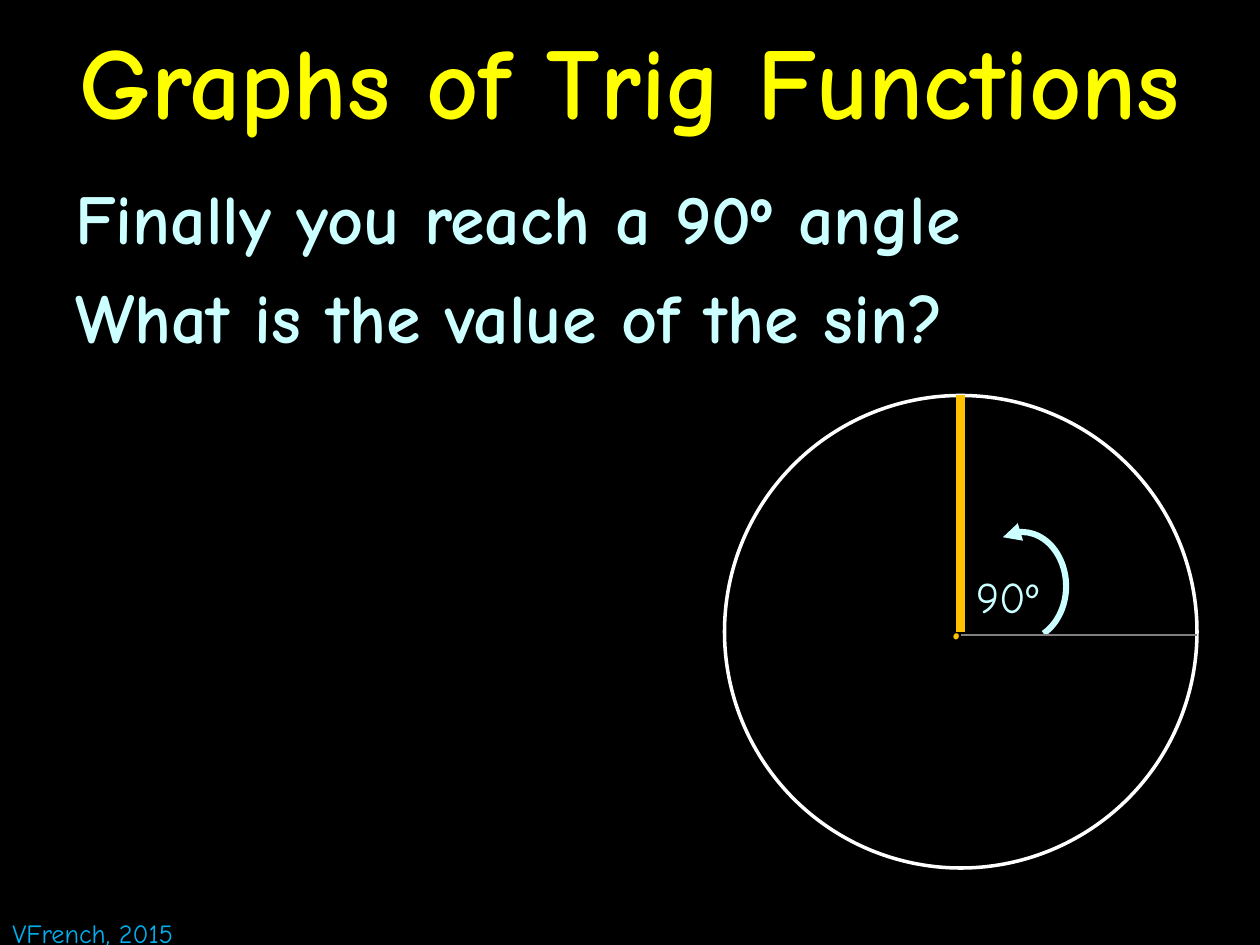
from pptx import Presentation
from pptx.dml.color import RGBColor
from pptx.enum import shapes, text
from pptx.oxml.ns import qn
from pptx.util import Pt
from lxml import etree


def rgb(value):
    return RGBColor.from_string(value)


def add_text(lines, x, y, w, h, size, color, bold=False, wrap=True, before=0):
    tf = s.shapes.add_textbox(Pt(x), Pt(y), Pt(w), Pt(h)).text_frame
    tf.word_wrap = wrap
    tf.text = "\n".join(lines)
    for p in tf.paragraphs:
        p.space_before = Pt(before)
        for r in p.runs:
            r.font.name = "Comic Neue"
            r.font.size = Pt(size)
            r.font.bold = bold
            r.font.color.rgb = rgb(color)
    return tf


prs = Presentation()
prs.slide_width, prs.slide_height = Pt(720), Pt(540)
s = prs.slides.add_slide(prs.slide_layouts[6])
s.background.fill.solid()
s.background.fill.fore_color.rgb = rgb("000000")

add_text(["Finally you reach a 90º angle", "What is the value of the sin?"],
         36, 96, 648, 444, 40, "CCFFFF", bold=True, before=9)
title = add_text(["Graphs of Trig Functions"], 0, 0, 720, 90, 58, "FFFF00", bold=True)
title.vertical_anchor = text.MSO_ANCHOR.MIDDLE
title.paragraphs[0].alignment = text.PP_ALIGN.CENTER
add_text(["VFrench, 2015"], 0, 520.5, 122, 25, 15, "00B0F0", wrap=False)

radius, cx, cy = 135, 549, 361
circle = s.shapes.add_shape(shapes.MSO_SHAPE.OVAL, Pt(cx - radius), Pt(cy - radius),
                            Pt(2 * radius), Pt(2 * radius))
add_text(["."], 536.5, 322, 24.5, 55.5, 40, "FFC000", wrap=False)
add_text(["90º"], 551, 322, 67, 37.5, 25, "CCFFFF")
arc = s.shapes.add_shape(shapes.MSO_SHAPE.ARC, Pt(558.7), Pt(304), Pt(50.5), Pt(62))
arc.adjustments[0], arc.adjustments[1] = 149.29, 39.2

for sp, color, width in ((circle, "FFFFFF", 2), (arc, "CCFFFF", 3.5)):
    sp.shadow.inherit = False
    sp.fill.background()
    sp.line.color.rgb = rgb(color)
    sp.line.width = Pt(width)
etree.SubElement(arc.line._get_or_add_ln(), qn("a:headEnd"), type="triangle")

for x1, y1, x2, y2, color, width in (
    (cx, cy, cx, cy - radius, "FFC000", 5),
    (cx, cy + 2, cx + radius, cy + 2, "808080", 1),
):
    line = s.shapes.add_connector(shapes.MSO_CONNECTOR.STRAIGHT, Pt(x1), Pt(y1), Pt(x2), Pt(y2))
    line.line.color.rgb = rgb(color)
    line.line.width = Pt(width)
    etree.SubElement(line._element.spPr, qn("a:effectLst"))

prs.save("out.pptx")
